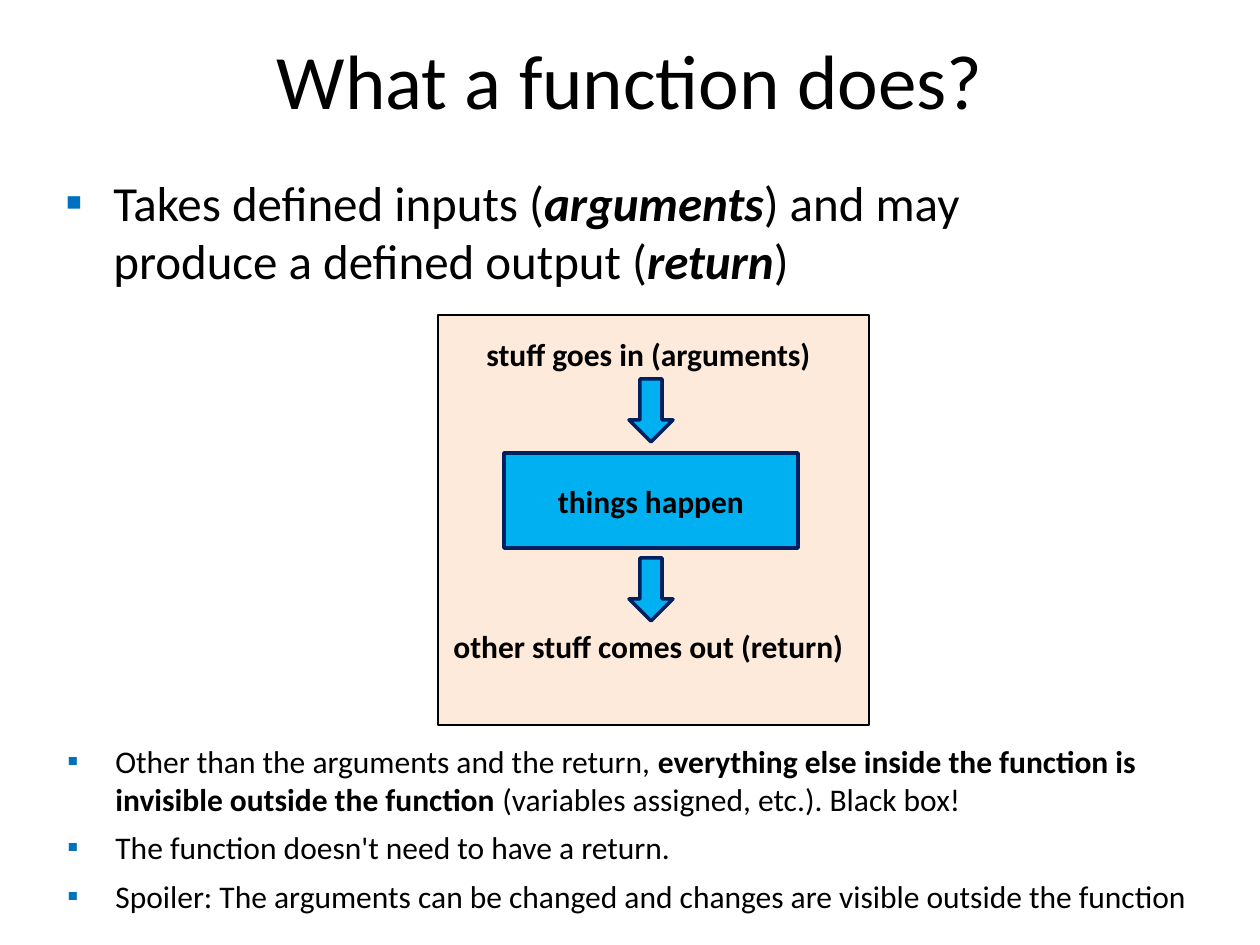
"""Build the slide that explains what a function does."""
from dataclasses import dataclass

import lxml.etree
import pptx
import pptx.dml.color
import pptx.enum.shapes
import pptx.enum.text
import pptx.oxml.ns
import pptx.util

PX = 914400 / 126
FONT = "Calibri"
BLACK = pptx.dml.color.RGBColor(0x00, 0x00, 0x00)
PEACH = pptx.dml.color.RGBColor(0xFD, 0xEA, 0xDA)
SKY = pptx.dml.color.RGBColor(0x00, 0xB0, 0xF0)
NAVY = pptx.dml.color.RGBColor(0x00, 0x20, 0x60)
BULLET_BLUE = pptx.dml.color.RGBColor(0x00, 0x70, 0xC0)
RECTANGLE = pptx.enum.shapes.MSO_SHAPE.RECTANGLE
DOWN_ARROW = pptx.enum.shapes.MSO_SHAPE.DOWN_ARROW
CENTER = pptx.enum.text.PP_ALIGN.CENTER
MIDDLE = pptx.enum.text.MSO_ANCHOR.MIDDLE
TOP = pptx.enum.text.MSO_ANCHOR.TOP


@dataclass(frozen=True)
class Box:
    left: int
    top: int
    width: int
    height: int

    def emu(self) -> list[int]:
        return [round(n * PX) for n in (self.left, self.top, self.width, self.height)]


@dataclass(frozen=True)
class Span:
    text: str
    bold: bool = False
    italic: bool = False


def add_bullet(paragraph) -> None:
    """Give a paragraph a hanging square bullet."""
    paragraph.space_after = pptx.util.Pt(6)
    properties = paragraph._p.get_or_add_pPr()
    properties.set("marL", str(round(48 * PX)))
    properties.set("indent", str(round(-48 * PX)))
    qn = pptx.oxml.ns.qn
    color = lxml.etree.SubElement(properties, qn("a:buClr"))
    lxml.etree.SubElement(color, qn("a:srgbClr"), val=str(BULLET_BLUE))
    lxml.etree.SubElement(properties, qn("a:buFont"), typeface=FONT)
    lxml.etree.SubElement(properties, qn("a:buChar"), char="▪")


def write(shape, paragraphs: list[list[Span]], *, size: int, align=None,
          anchor=TOP, wrap: bool = True, bullet: bool = False) -> None:
    """Fill a shape with formatted paragraphs."""
    frame = shape.text_frame
    frame.word_wrap = wrap
    frame.vertical_anchor = anchor
    if not wrap:
        frame.auto_size = pptx.enum.text.MSO_AUTO_SIZE.SHAPE_TO_FIT_TEXT
    for index, spans in enumerate(paragraphs):
        paragraph = frame.add_paragraph() if index else frame.paragraphs[0]
        paragraph.alignment = align
        if bullet:
            add_bullet(paragraph)
        for span in spans:
            for line, text in enumerate(span.text.split("\n")):
                if line:
                    paragraph.add_line_break()
                run = paragraph.add_run()
                run.text = text
                run.font.name = FONT
                run.font.size = pptx.util.Pt(size)
                run.font.bold = span.bold
                run.font.italic = span.italic
                run.font.color.rgb = BLACK


def add_block(slide, kind, box: Box, fill, line, line_width: int):
    """Draw a filled and outlined preset shape."""
    block = slide.shapes.add_shape(kind, *box.emu())
    block.shadow.inherit = False
    block.fill.solid()
    block.fill.fore_color.rgb = fill
    block.line.color.rgb = line
    block.line.width = pptx.util.Pt(line_width)
    return block


def add_text(slide, box: Box, paragraphs: list[list[Span]], **style) -> None:
    """Place a text box."""
    write(slide.shapes.add_textbox(*box.emu()), paragraphs, **style)


def main() -> None:
    """Build and save the slide."""
    deck = pptx.Presentation()
    deck.slide_width = pptx.util.Inches(10)
    deck.slide_height = pptx.util.Inches(7.5)
    slide = deck.slides.add_slide(deck.slide_layouts[6])

    add_block(slide, RECTANGLE, Box(438, 315, 431, 410), PEACH, BLACK, 1)
    add_text(slide, Box(0, 0, 1260, 158), [[Span("What a function does?")]],
             size=44, align=CENTER, anchor=MIDDLE)
    add_text(slide, Box(53, 166, 1134, 338), [[
        Span("Takes defined inputs ("),
        Span("arguments", bold=True, italic=True),
        Span(") and may \nproduce a defined output ("),
        Span("return", bold=True, italic=True),
        Span(")"),
    ]], size=28, bullet=True)

    process = add_block(slide, RECTANGLE, Box(504, 453, 294, 95), SKY, NAVY, 2)
    write(process, [[Span("things happen", bold=True)]],
          size=18, align=CENTER, anchor=MIDDLE)
    for arrow_top in (379, 558):
        add_block(slide, DOWN_ARROW, Box(629, arrow_top, 44, 63), SKY, NAVY, 2)
    for label, box in (
        ("stuff goes in (arguments)", Box(474, 329, 354, 50)),
        ("other stuff comes out (return)", Box(441, 621, 420, 50)),
    ):
        add_text(slide, box, [[Span(label, bold=True)]], size=18, wrap=False)

    add_text(slide, Box(55, 736, 1159, 204), [
        [Span("Other than the arguments and the return, "),
         Span("everything else inside the function is invisible outside the function ",
              bold=True),
         Span("(variables assigned, etc.). Black box!")],
        [Span("The function doesn't need to have a return.")],
        [Span("Spoiler: The arguments can be changed and changes are visible "
              "outside the function")],
    ], size=18, bullet=True)
    deck.save("out.pptx")


if __name__ == "__main__":
    main()
